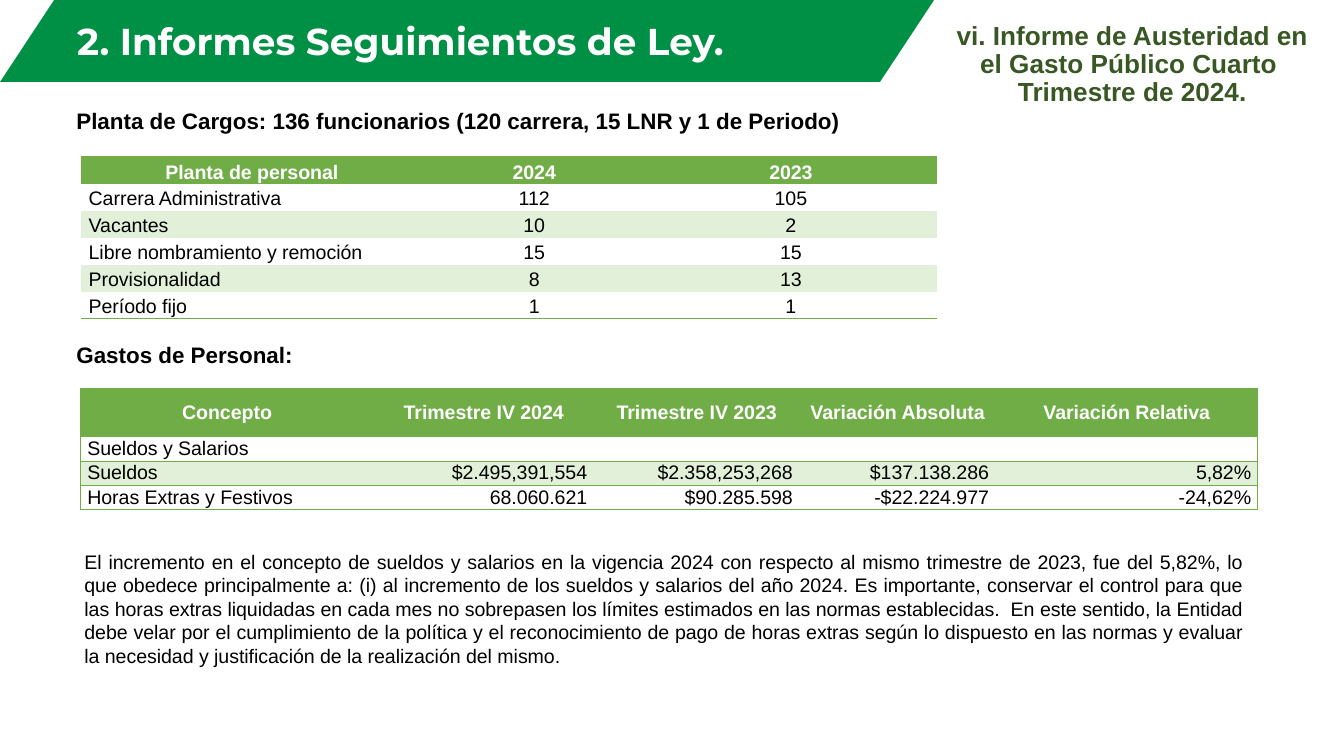
"""Build the slide on staff numbers and personnel spending."""
from dataclasses import dataclass

from lxml import etree
from pptx import Presentation
from pptx.dml.color import RGBColor
from pptx.enum import shapes, text
from pptx.oxml import ns
from pptx.util import Inches, Pt

BANNER_GREEN = RGBColor(0x00, 0x90, 0x45)
TABLE_GREEN = RGBColor(0x70, 0xAD, 0x47)
BAND_GREEN = RGBColor(0xE2, 0xF0, 0xD9)
TOPIC_GREEN = RGBColor(0x38, 0x57, 0x23)
WHITE = RGBColor(0xFF, 0xFF, 0xFF)
BLACK = RGBColor(0x00, 0x00, 0x00)

CENTER = text.PP_ALIGN.CENTER
JUSTIFY = text.PP_ALIGN.JUSTIFY
LEFT = text.PP_ALIGN.LEFT
RIGHT = text.PP_ALIGN.RIGHT
NO_STYLE = "{2D5ABB26-0587-4C30-8999-92F81FD0307C}"
BODY_SIZE = 10.5
SLIDE_WIDTH = Inches(10)
SLIDE_HEIGHT = SLIDE_WIDTH * 9 // 16


@dataclass
class TextBlock:
    box: tuple[float, float, float, float]
    words: str
    size: float = 12
    bold: bool = True
    color: RGBColor = BLACK
    align: text.PP_ALIGN = JUSTIFY
    spacing: float = 1.0
    wrap: bool = True
    font: str = "Arial"


@dataclass
class DataTable:
    left: float
    top: float
    columns: list[float]
    heights: list[float]
    rows: list[list[str]]
    label_align: text.PP_ALIGN
    value_align: text.PP_ALIGN
    margin: float
    line_width: float
    grid: bool
    paragraph_format: dict


TOPIC = TextBlock((6.95, 0.12, 2.95, 0.74),
                  "vi. Informe de Austeridad en el Gasto Público Cuarto  Trimestre de 2024.",
                  size=14, color=TOPIC_GREEN, align=CENTER, spacing=0.9)
TITLE = TextBlock((0.08, 0.09, 5.88, 0.43), "2. Informes Seguimientos de Ley. ",
                  size=20, color=WHITE, align=CENTER, spacing=0.9, font="Montserrat")
STAFF_HEADING = TextBlock((0.47, 0.75, 6.01, 0.3),
                          "Planta de Cargos: 136 funcionarios (120 carrera, 15 LNR y 1 de Periodo) ")
SPENDING_HEADING = TextBlock((0.47, 2.49, 1.88, 0.3), "Gastos de Personal: ", wrap=False)
COMMENTARY = TextBlock(
    (0.53, 4.04, 8.83, 0.98),
    "El incremento en el concepto de sueldos y salarios en la vigencia 2024 con respecto al mismo "
    "trimestre de 2023, fue del 5,82%, lo que obedece principalmente a: (i) al incremento de los "
    "sueldos y salarios del año 2024. Es importante, conservar el control para que las horas extras "
    "liquidadas en cada mes no sobrepasen los límites estimados en las normas establecidas.  En este "
    "sentido, la Entidad debe velar por el cumplimiento de la política y el reconocimiento de pago de "
    "horas extras según lo dispuesto en las normas y evaluar la necesidad y justificación de la "
    "realización del mismo.",
    size=BODY_SIZE, bold=False)

STAFF = DataTable(
    0.6, 1.17, [2.55, 1.65, 2.17], [0.2] * 6,
    [["Planta de personal", "2024", "2023"],
     ["Carrera Administrativa", "112", "105"],
     ["Vacantes", "10", "2"],
     ["Libre nombramiento y remoción", "15", "15"],
     ["Provisionalidad", "8", "13"],
     ["Período fijo", "1", "1"]],
    JUSTIFY, CENTER, 0.06, 1, False, {"line_spacing": 1.15, "space_after": Pt(6)})
SPENDING = DataTable(
    0.6, 2.89, [2.18, 1.64, 1.53, 1.46, 1.95], [0.36, 0.18, 0.18, 0.18],
    [["Concepto", "Trimestre IV 2024", "Trimestre IV 2023", "Variación Absoluta", "Variación Relativa"],
     ["Sueldos y Salarios", "", "", "", ""],
     ["Sueldos", "$2.495,391,554", "$2.358,253,268", "$137.138.286", "5,82%"],
     ["Horas Extras y Festivos", "68.060.621", "$90.285.598", "-$22.224.977", "-24,62%"]],
    LEFT, RIGHT, 0.05, 0.5, True, {})


def apply_format(target, values: dict) -> None:
    for name, value in values.items():
        setattr(target, name, value)


def write(paragraph, words: str, size: float, bold: bool, color: RGBColor, font: str = "Arial") -> None:
    run = paragraph.add_run()
    run.text = words
    apply_format(run.font, {"size": Pt(size), "bold": bold, "name": font})
    run.font.color.rgb = color


def fill_block(shape, block: TextBlock, anchor: text.MSO_ANCHOR = text.MSO_ANCHOR.TOP) -> None:
    frame = shape.text_frame
    apply_format(frame, {"word_wrap": block.wrap, "auto_size": text.MSO_AUTO_SIZE.NONE,
                         "vertical_anchor": anchor})
    paragraph = frame.paragraphs[0]
    apply_format(paragraph, {"alignment": block.align, "line_spacing": block.spacing})
    write(paragraph, block.words, block.size, block.bold, block.color, block.font)


def add_block(slide, block: TextBlock) -> None:
    fill_block(slide.shapes.add_textbox(*map(Inches, block.box)), block)


def add_borders(cell, sides: str, width: float) -> None:
    properties = cell._tc.get_or_add_tcPr()
    for side in sides:
        line = etree.SubElement(properties, ns.qn(f"a:ln{side}"), w=str(Pt(width)))
        solid = etree.SubElement(line, ns.qn("a:solidFill"))
        etree.SubElement(solid, ns.qn("a:srgbClr"), val=str(TABLE_GREEN))


def border_sides(data: DataTable, row: int, column: int) -> str:
    rules = {"L": data.grid and column == 0,
             "R": data.grid and column == len(data.columns) - 1,
             "T": data.grid or row == 0,
             "B": data.grid or row == len(data.rows) - 1}
    return "".join(side for side, drawn in rules.items() if drawn)


def format_cell(cell, data: DataTable, row: int, column: int) -> None:
    header = row == 0
    apply_format(cell, {"margin_left": Inches(data.margin), "margin_right": Inches(data.margin),
                        "margin_top": 0, "margin_bottom": 0,
                        "vertical_anchor": text.MSO_ANCHOR.MIDDLE})
    add_borders(cell, border_sides(data, row, column), data.line_width)
    cell.fill.solid()
    cell.fill.fore_color.rgb = TABLE_GREEN if header else (WHITE if row % 2 else BAND_GREEN)
    paragraph = cell.text_frame.paragraphs[0]
    body_align = data.value_align if column else data.label_align
    apply_format(paragraph, {"alignment": CENTER if header else body_align, **data.paragraph_format})
    words = data.rows[row][column]
    if words:
        write(paragraph, words, BODY_SIZE, header, WHITE if header else BLACK)
    else:
        etree.SubElement(paragraph._p, ns.qn("a:endParaRPr"), sz=str(int(BODY_SIZE * 100)))


def add_data_table(slide, data: DataTable) -> None:
    frame = slide.shapes.add_table(len(data.rows), len(data.columns), Inches(data.left), Inches(data.top),
                                   Inches(sum(data.columns)), Inches(sum(data.heights)))
    table = frame.table
    apply_format(table, {"first_row": False, "horz_banding": False})
    table._tbl.tblPr.find(ns.qn("a:tableStyleId")).text = NO_STYLE
    for column, width in zip(table.columns, data.columns):
        column.width = Inches(width)
    for row, height in enumerate(data.heights):
        table.rows[row].height = Inches(height)
        for column in range(len(data.columns)):
            format_cell(table.cell(row, column), data, row, column)


def add_title(slide) -> None:
    banner = slide.shapes.add_shape(shapes.MSO_SHAPE.PARALLELOGRAM, 0, 0, Inches(6.95), Inches(0.61))
    banner.adjustments[0] = 0.66
    banner.shadow.inherit = False
    banner.fill.solid()
    banner.fill.fore_color.rgb = BANNER_GREEN
    banner.line.fill.background()
    title = slide.shapes.title
    title._element.addprevious(banner._element)
    apply_format(title, dict(zip(("left", "top", "width", "height"), map(Inches, TITLE.box))))
    fill_block(title, TITLE, text.MSO_ANCHOR.BOTTOM)


def main() -> None:
    presentation = Presentation()
    apply_format(presentation, {"slide_width": SLIDE_WIDTH, "slide_height": SLIDE_HEIGHT})
    slide = presentation.slides.add_slide(presentation.slide_layouts[5])
    add_title(slide)
    add_block(slide, TOPIC)
    add_data_table(slide, SPENDING)
    add_block(slide, STAFF_HEADING)
    add_block(slide, COMMENTARY)
    add_data_table(slide, STAFF)
    add_block(slide, SPENDING_HEADING)
    presentation.save("out.pptx")


if __name__ == "__main__":
    main()
